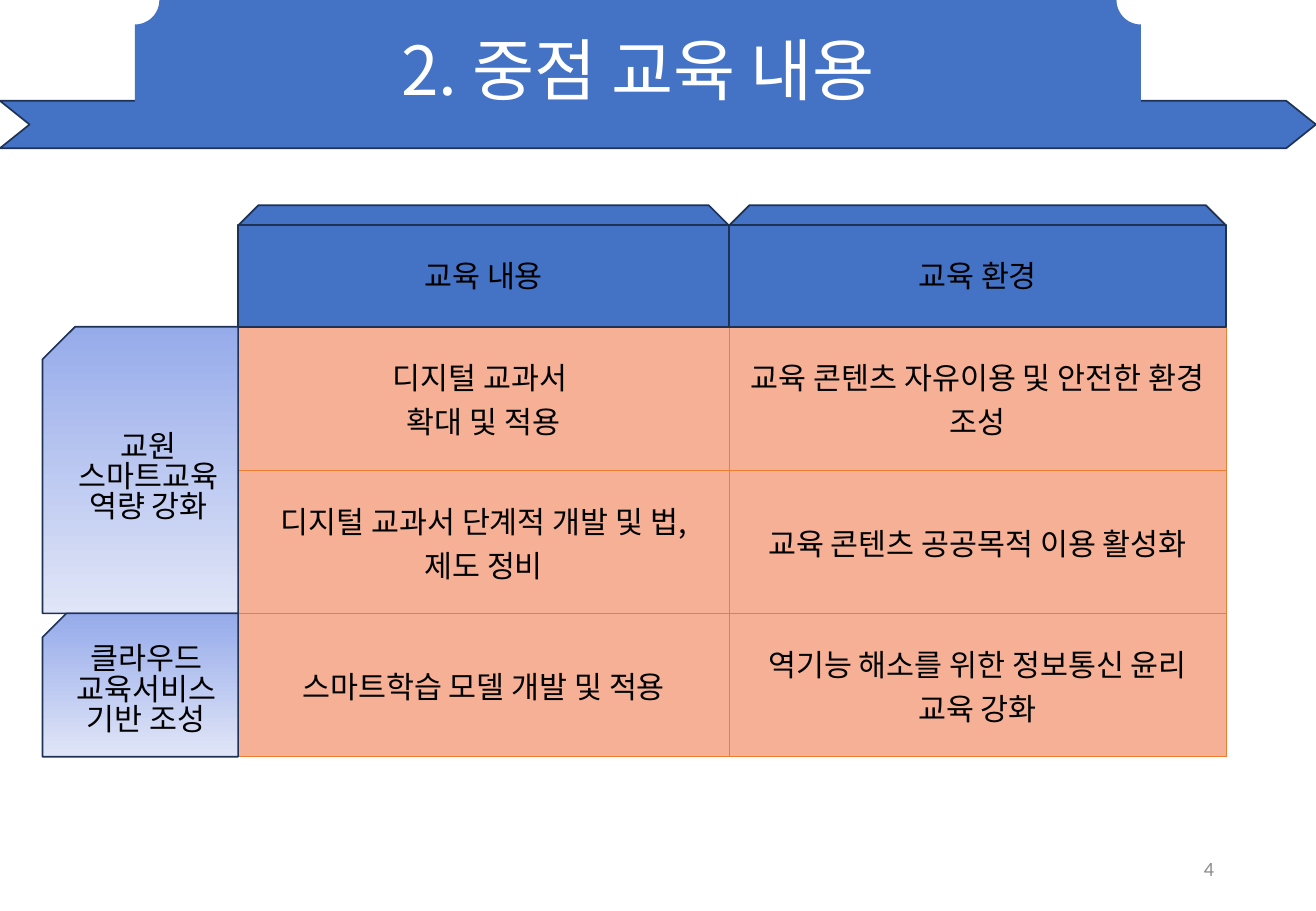
from lxml.etree import SubElement
from pptx import Presentation
from pptx.dml.color import RGBColor
from pptx.enum.shapes import MSO_SHAPE as Shape
from pptx.enum.text import MSO_ANCHOR as Anchor, PP_ALIGN as Align
from pptx.oxml.ns import qn
from pptx.util import Inches, Pt

FONT = "Noto Sans CJK KR"
BLUE, NAVY, ORANGE, PEACH = "4472C4", "1E3256", "ED7D31", "F5B096"
LABEL_STOPS = ["96ABEA", "E0E5F7"]
WIDTH, HEIGHT = 10.83, 7.5
LABEL_LEFT, TABLE_LEFT, TABLE_TOP = 0.35, 1.96, 2.69
COLUMNS, ROW_HEIGHT = [4.04, 4.09], 1.18
HEADERS = ["교육 내용", "교육 환경"]
LABELS = [("교원 스마트교육 역량 강화", 2), ("클라우드 교육서비스 기반 조성", 1)]
CONTENT = [
    ["디지털 교과서 \n확대 및 적용", "교육 콘텐츠 자유이용 및 안전한 환경 조성"],
    ["디지털 교과서 단계적 개발 및 법, 제도 정비", "교육 콘텐츠 공공목적 이용 활성화"],
    ["스마트학습 모델 개발 및 적용", "역기능 해소를 위한 정보통신 윤리 교육 강화"],
]


def color(value):
    return RGBColor.from_string(value)


def write(frame, text, size=18, font=FONT, ink="000000", align=Align.CENTER, spacing=1.0):
    frame.word_wrap = True
    frame.vertical_anchor = Anchor.MIDDLE
    for index, line in enumerate(text.split("\n")):
        paragraph = frame.paragraphs[0] if index == 0 else frame.add_paragraph()
        paragraph.alignment = align
        paragraph.line_spacing = spacing
        run = paragraph.add_run()
        run.text = line
        run.font.size = Pt(size)
        run.font.name = font
        run.font.color.rgb = color(ink)
        SubElement(run.font._element, qn("a:ea"), typeface=font)


def add_box(slide, kind, box, fill=BLUE, line=NAVY):
    shape = slide.shapes.add_shape(kind, *map(Inches, box))
    shape.shadow.inherit = False
    if isinstance(fill, list):
        shape.fill.gradient()
        shape.fill.gradient_angle = 270
        for stop, value in zip(shape.fill.gradient_stops, fill):
            stop.color.rgb = color(value)
        for position, stop in enumerate(shape.fill.gradient_stops):
            stop.position = position
    else:
        shape.fill.solid()
        shape.fill.fore_color.rgb = color(fill)
    if line:
        shape.line.color.rgb = color(line)
        shape.line.width = Pt(1)
    else:
        shape.line.fill.background()
    return shape


def add_banner(slide, box, text):
    left, top, width, height = box
    ribbon = add_box(slide, Shape.NOTCHED_RIGHT_ARROW, (0, top + 0.83, WIDTH, 0.39))
    ribbon.adjustments[0] = 1
    ribbon.adjustments[1] = 0.625
    add_box(slide, Shape.PLAQUE, box, line=None)
    title = slide.shapes.title
    title.left, title.top, title.width, title.height = map(Inches, box)
    write(title.text_frame, text, size=40, ink="FFFFFF", spacing=0.9)
    slide.shapes._spTree.append(title._element)


def format_cell(cell, text):
    write(cell.text_frame, text)
    cell.vertical_anchor = Anchor.MIDDLE
    properties = cell._tc.get_or_add_tcPr()
    for side in ("a:lnL", "a:lnR", "a:lnT", "a:lnB"):
        border = SubElement(properties, qn(side), w=str(Pt(0.5)))
        SubElement(SubElement(border, qn("a:solidFill")), qn("a:srgbClr"), val=ORANGE)
    cell.fill.solid()
    cell.fill.fore_color.rgb = color(PEACH)


def add_content(slide, box):
    table = slide.shapes.add_table(len(CONTENT), len(COLUMNS), *map(Inches, box)).table
    table.first_row = table.horz_banding = False
    for column, width in zip(table.columns, COLUMNS):
        column.width = Inches(width)
    for row_index, texts in enumerate(CONTENT):
        table.rows[row_index].height = Inches(ROW_HEIGHT)
        for column_index, text in enumerate(texts):
            format_cell(table.cell(row_index, column_index), text)


def add_labels(slide, box):
    left, top, width, height = box
    for text, rows in LABELS:
        label_height = height * rows / len(CONTENT)
        label = add_box(slide, Shape.SNIP_1_RECTANGLE, (left, top, width, label_height), LABEL_STOPS)
        label._element.spPr.find(qn("a:xfrm")).set("flipH", "1")
        write(label.text_frame, text, spacing=0.83)
        top += label_height


def add_headers(slide, box):
    left, top, width, height = box
    tab = 0.16
    for text, column in zip(HEADERS, COLUMNS):
        add_box(slide, Shape.SNIP_2_SAME_RECTANGLE, (left, top, column, height))
        front = add_box(slide, Shape.RECTANGLE, (left, top + tab, column, height - tab))
        write(front.text_frame, text)
        left += column


def add_page_number(slide, box, number):
    text_box = slide.shapes.add_textbox(*map(Inches, box))
    write(text_box.text_frame, number, size=12, font="Calibri", ink="8C8C8C", align=Align.RIGHT)


def main():
    presentation = Presentation()
    presentation.slide_width = Inches(WIDTH)
    presentation.slide_height = Inches(HEIGHT)
    slide = presentation.slides.add_slide(presentation.slide_layouts[5])
    table_width, table_height = sum(COLUMNS), ROW_HEIGHT * len(CONTENT)
    add_banner(slide, (1.11, 0, 8.28, 1.21), "2. 중점 교육 내용")
    add_content(slide, (TABLE_LEFT, TABLE_TOP, table_width, table_height))
    add_page_number(slide, (7.65, 6.95, 2.44, 0.4), "4")
    add_labels(slide, (LABEL_LEFT, TABLE_TOP, TABLE_LEFT - LABEL_LEFT, table_height))
    add_headers(slide, (TABLE_LEFT, TABLE_TOP - 1, table_width, 1))
    presentation.save("out.pptx")


if __name__ == "__main__":
    main()
